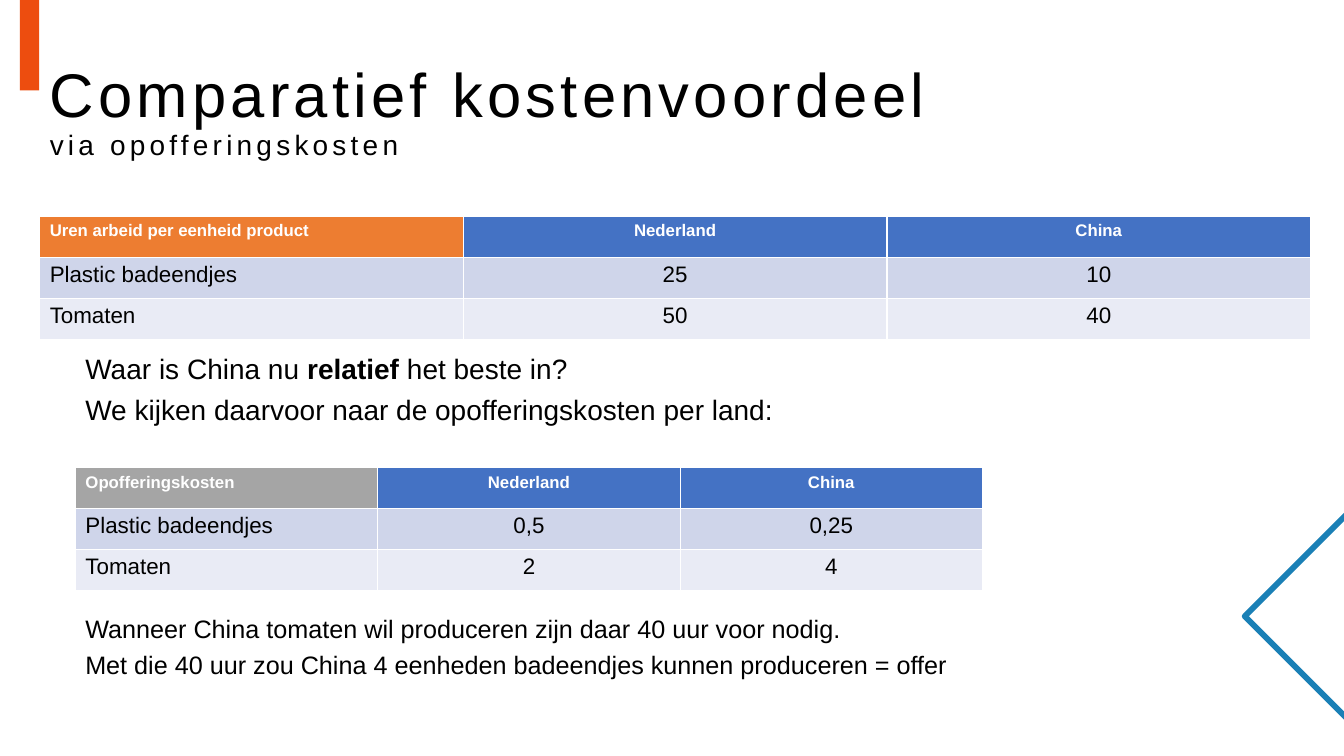
from dataclasses import dataclass

from pptx import Presentation
from pptx.dml.color import RGBColor as Rgb
from pptx.enum.shapes import MSO_SHAPE as Shape
from pptx.enum.text import MSO_ANCHOR as Anchor, MSO_AUTO_SIZE as Fit, PP_ALIGN as Align
from pptx.util import Cm, Pt


@dataclass(frozen=True)
class Theme:
    face: str = "Arial"
    ink: str = "000000"
    white: str = "FFFFFF"
    bar: str = "ED4D0F"
    edge: str = "1A80B6"
    head: str = "4472C4"
    orange: str = "ED7D31"
    grey: str = "A5A5A5"
    bands: tuple = ("CFD5EA", "E9EBF5")
    title: int = 44
    lead: int = 20
    note: int = 18
    cell: int = 16
    label: int = 12


THEME = Theme()


def paint(fill, color):
    fill.solid()
    fill.fore_color.rgb = Rgb.from_string(color)


def style(font, size, color=THEME.ink, bold=None):
    font.name = THEME.face
    font.size = Pt(size)
    font.bold = bold
    font.color.rgb = Rgb.from_string(color)


def add_angle(slide):
    right, top, base = 34.1, 12.8, 18.26
    tip = right - (base - top) / 2
    pen = slide.shapes.build_freeform(Cm(right), Cm(top))
    pen.add_line_segments([(Cm(tip), Cm((top + base) / 2)), (Cm(right), Cm(base))], close=False)
    angle = pen.convert_to_shape()
    angle.shadow.inherit = False
    angle.fill.background()
    paint(angle.line.fill, THEME.edge)
    angle.line.width = Pt(4.25)


def add_bar(slide):
    bar = slide.shapes.add_shape(Shape.RECTANGLE, Cm(0.5), Cm(-0.64), Cm(0.49), Cm(2.92))
    bar.shadow.inherit = False
    paint(bar.fill, THEME.bar)
    bar.line.fill.background()


def set_title(slide, main_text, sub_text):
    title = slide.shapes.title
    title.left, title.top, title.width, title.height = Cm(1), Cm(1), Cm(32.03), Cm(3.68)
    frame = title.text_frame
    frame.auto_size = Fit.NONE
    frame.vertical_anchor = Anchor.MIDDLE
    para = frame.paragraphs[0]
    para.alignment = Align.LEFT
    para.line_spacing = 0.9
    for text, size in ((main_text, THEME.title), (sub_text, THEME.lead)):
        if para.runs:
            para.add_line_break()
        run = para.add_run()
        run.text = text
        style(run.font, size)
        run.font._element.set("spc", "300")


def add_grid(slide, left, top, width, corner, rows):
    high = 1.03
    grid = slide.shapes.add_table(
        len(rows), len(rows[0]), Cm(left), Cm(top), Cm(width), Cm(high * len(rows))
    ).table
    for i, row in enumerate(rows):
        for j, text in enumerate(row):
            cell = grid.cell(i, j)
            cell.text = text
            para = cell.text_frame.paragraphs[0]
            para.alignment = Align.CENTER if j else Align.LEFT
            if i == 0:
                paint(cell.fill, THEME.head if j else corner)
                style(para.font, THEME.label, THEME.white, True)
            else:
                paint(cell.fill, THEME.bands[(i - 1) % 2])
                style(para.font, THEME.cell, bold=False)


def add_text(slide, top, width, height, size, lines):
    box = slide.shapes.add_textbox(Cm(1.9), Cm(top), Cm(width), Cm(height))
    frame = box.text_frame
    frame.word_wrap = True
    for i, parts in enumerate(lines):
        para = frame.add_paragraph() if i else frame.paragraphs[0]
        para.space_before = Pt(size / 4)
        style(para.font, size)
        for text, bold in parts:
            run = para.add_run()
            run.text = text
            if bold:
                run.font.bold = True


def main():
    deck = Presentation()
    deck.slide_width, deck.slide_height = Cm(33.87), Cm(19.05)
    slide = deck.slides.add_slide(deck.slide_layouts[5])
    add_angle(slide)
    add_bar(slide)
    set_title(slide, "Comparatief kostenvoordeel", "via opofferingskosten")
    add_grid(slide, 1, 5.46, 32.03, THEME.orange, [
        ("Uren arbeid per eenheid product", "Nederland", "China"),
        ("Plastic badeendjes", "25", "10"),
        ("Tomaten", "50", "40"),
    ])
    add_text(slide, 8.74, 22.86, 2.8, THEME.lead, [
        [("Waar is China nu ", False), ("relatief", True), (" het beste in?", False)],
        [("We kijken daarvoor naar de opofferingskosten per land:", False)],
    ])
    add_grid(slide, 1.9, 11.79, 22.86, THEME.grey, [
        ("Opofferingskosten", "Nederland", "China"),
        ("Plastic badeendjes", "0,5", "0,25"),
        ("Tomaten", "2", "4"),
    ])
    add_text(slide, 15.32, 26.47, 3.6, THEME.note, [
        [("Wanneer China tomaten wil produceren zijn daar 40 uur voor nodig.", False)],
        [("Met die 40 uur zou China 4 eenheden badeendjes kunnen produceren = offer", False)],
    ])
    deck.save("out.pptx")


if __name__ == "__main__":
    main()
